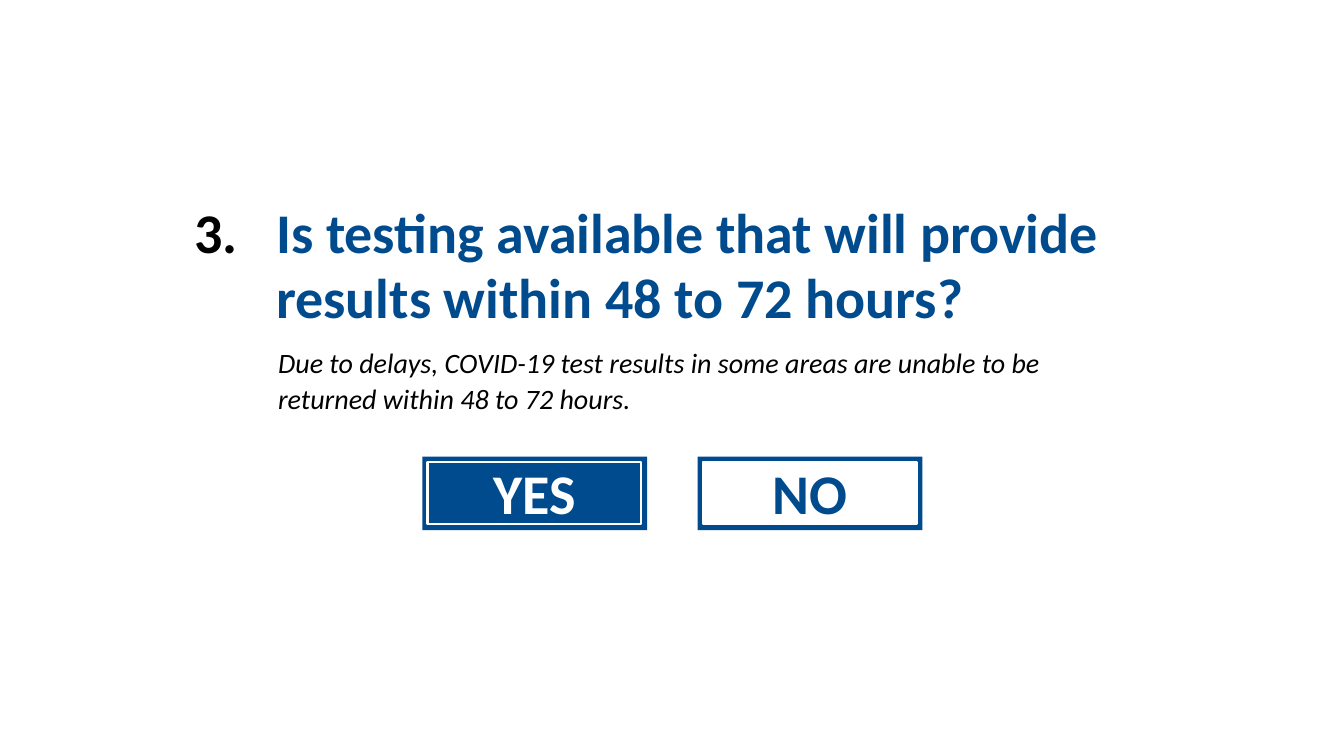
from dataclasses import dataclass

from lxml import etree
from pptx import Presentation
from pptx.dml.color import RGBColor
from pptx.enum.shapes import MSO_SHAPE
from pptx.enum.text import MSO_ANCHOR, MSO_AUTO_SIZE, PP_ALIGN
from pptx.oxml.ns import qn
from pptx.util import Inches, Pt

RECTANGLE = MSO_SHAPE.RECTANGLE
TOP = MSO_ANCHOR.TOP
GROW = MSO_AUTO_SIZE.SHAPE_TO_FIT_TEXT
LEFT, CENTER = PP_ALIGN.LEFT, PP_ALIGN.CENTER


@dataclass(frozen=True)
class Theme:
    font: str = "Calibri"
    blue: str = "004B8D"
    black: str = "000000"
    white: str = "FFFFFF"
    large: int = 40
    small: int = 20


THEME = Theme()


def write(box, text, size, color, align=LEFT, bold=False, italic=False):
    """Fill the box with one formatted run and return its paragraph."""
    frame = box.text_frame
    frame.word_wrap = True
    frame.auto_size = GROW
    frame.vertical_anchor = TOP
    para = frame.paragraphs[0]
    para.alignment = align
    span = para.add_run()
    span.text = text
    span.font.name = THEME.font
    span.font.size = Pt(size)
    span.font.bold = bold
    span.font.italic = italic
    span.font.color.rgb = RGBColor.from_string(color)
    return para


def number_paragraph(para, start, color, indent):
    """Give the paragraph a hanging automatic number."""
    properties = para._p.get_or_add_pPr()
    properties.set("marL", str(indent))
    properties.set("indent", str(-indent))
    bullet_color = etree.SubElement(properties, qn("a:buClr"))
    etree.SubElement(bullet_color, qn("a:srgbClr"), val=color)
    etree.SubElement(properties, qn("a:buFont"), typeface="+mj-lt")
    etree.SubElement(properties, qn("a:buAutoNum"), type="arabicPeriod", startAt=str(start))


def add_question(page, text, number):
    title = page.shapes.title
    title.left, title.top = Inches(1.83), Inches(1.92)
    title.width, title.height = Inches(9.68), Inches(1.42)
    para = write(title, text, THEME.large, THEME.blue, bold=True)
    para.line_spacing = Pt(47)
    para.space_before = Pt(0)
    number_paragraph(para, number, THEME.black, Inches(0.81))


def add_explanation(page, text):
    box = page.shapes.add_textbox(Inches(2.66), Inches(3.36), Inches(8.25), Inches(0.81))
    para = write(box, text, THEME.small, THEME.black, italic=True)
    para.line_spacing = 1.07
    para.space_after = Pt(8)


def add_rectangle(group, left, top, width, height, fill=None, line=None):
    shape = group.shapes.add_shape(
        RECTANGLE, Inches(left), Inches(top), Inches(width), Inches(height))
    shape.shadow.inherit = False
    if fill:
        shape.fill.solid()
        shape.fill.fore_color.rgb = RGBColor.from_string(fill)
    else:
        shape.fill.background()
    if line:
        shape.line.color.rgb = RGBColor.from_string(line)
        shape.line.width = Pt(1.5)
    else:
        shape.line.fill.background()


def add_answer(page, text, left, color, inner_fill=None):
    """Draw a blue plate with a white inner frame and a centred label."""
    top = 4.53
    group = page.shapes.add_group_shape()
    add_rectangle(group, left, top, 2.23, 0.73, fill=THEME.blue)
    add_rectangle(group, left + 0.05, top + 0.05, 2.12, 0.62, inner_fill, THEME.white)
    label = group.shapes.add_textbox(
        Inches(left + 0.59), Inches(top - 0.03), Inches(1.05), Inches(0.77))
    write(label, text, THEME.large, color, CENTER, bold=True)


def main():
    deck = Presentation()
    deck.slide_width, deck.slide_height = Inches(13.33), Inches(7.5)
    page = deck.slides.add_slide(deck.slide_layouts.get_by_name("Title Only"))
    add_question(
        page, "Is testing available that will provide results within 48 to 72 hours?", 3)
    add_explanation(
        page, "Due to delays, COVID-19 test results in some areas are unable to be "
        "returned within 48 to 72 hours.")
    add_answer(page, "YES", 4.19, THEME.white)
    add_answer(page, "NO", 6.92, THEME.blue, inner_fill=THEME.white)
    deck.save("out.pptx")


if __name__ == "__main__":
    main()
